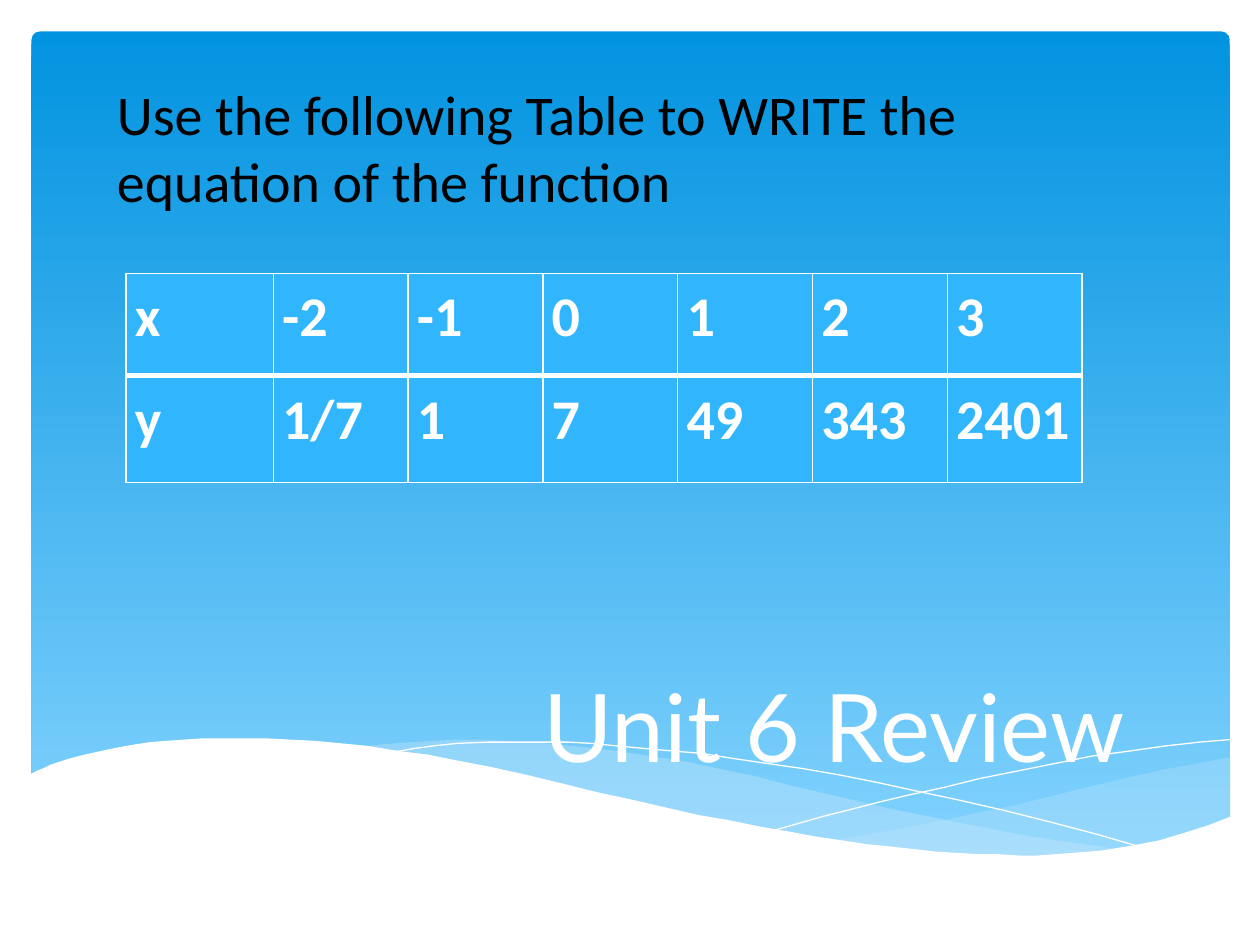
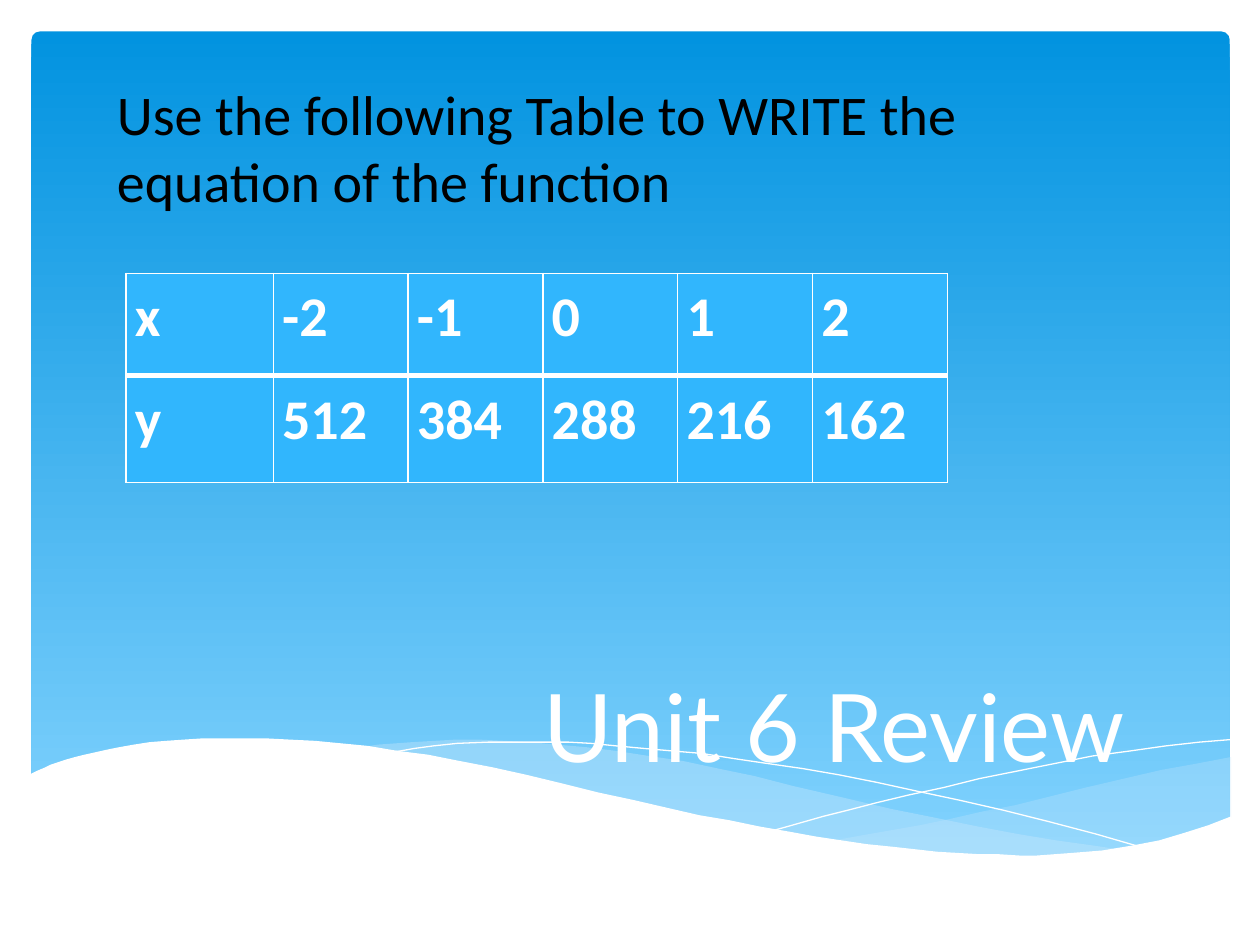
from lxml.etree import SubElement
from pptx import Presentation
from pptx.dml.color import RGBColor
from pptx.enum.shapes import MSO_SHAPE
from pptx.enum.text import MSO_AUTO_SIZE, PP_ALIGN
from pptx.oxml.ns import qn
from pptx.util import Pt

PX = 9144
COLORS = {
    "white": "FFFFFF",
    "black": "000000",
    "sky_top": "0293E0",
    "sky_bottom": "83D3FE",
    "mist": "C6E7FC",
    "cell": "31B6FD",
}
RGB = {name: RGBColor.from_string(value) for name, value in COLORS.items()}

RIGHT_MIST = [
    (976, 601), (950, 606), (922, 611), (892, 618), (862, 625), (834, 632), (806, 639),
    (780, 644), (754, 650), (730, 655), (707, 659), (684, 663), (662, 667), (692, 671),
    (719, 674), (746, 677), (770, 679), (793, 679), (815, 680), (836, 679), (855, 678),
    (873, 676), (890, 674), (907, 671), (922, 667), (937, 663), (951, 659), (964, 654),
    (977, 649), (977, 601),
]
MIDDLE_MIST = [
    (894, 675), (867, 671), (838, 667), (808, 662), (776, 656), (742, 649), (707, 642),
    (669, 633), (630, 624), (599, 616), (570, 610), (542, 604), (515, 600), (489, 596),
    (465, 593), (442, 591), (420, 589), (400, 588), (380, 587), (362, 587), (345, 588),
    (328, 589), (314, 590), (300, 591), (287, 593), (323, 598), (363, 604), (405, 613),
    (450, 624), (491, 634), (530, 642), (567, 650), (602, 657), (635, 663), (666, 668),
    (696, 672), (723, 676), (749, 678), (774, 679), (797, 680), (819, 680), (839, 680),
    (859, 679), (877, 677),
]
FALLING_LINE = [
    (310, 597), (318, 596), (329, 594), (344, 592), (363, 590), (388, 589), (417, 589),
    (451, 589), (469, 590), (489, 592), (511, 594), (533, 596), (557, 598), (582, 602),
    (609, 606), (637, 610), (666, 615), (696, 621), (728, 628), (761, 635), (796, 643),
    (832, 652), (870, 662), (908, 673),
]
RISING_LINE = [
    (614, 659), (625, 656), (653, 648), (673, 643), (696, 637), (721, 631), (749, 625),
    (777, 618), (807, 612), (837, 606), (867, 600), (897, 596), (925, 592), (952, 589),
    (976, 587),
]
WHITE_WAVE = [
    (977, 648), (959, 655), (940, 661), (920, 667), (899, 671), (875, 675), (850, 677),
    (823, 679), (809, 679), (793, 678), (778, 678), (761, 677), (744, 676), (726, 674),
    (708, 672), (688, 670), (668, 667), (648, 664), (626, 660), (603, 656), (579, 651),
    (555, 647), (529, 641), (503, 635), (475, 629), (447, 622), (418, 615), (391, 609),
    (365, 604), (340, 599), (316, 596), (292, 592), (271, 590), (250, 588), (230, 587),
    (211, 586), (193, 586), (177, 586), (161, 586), (146, 587), (132, 588), (119, 589),
    (106, 591), (95, 593), (85, 595), (76, 597), (67, 599), (59, 601), (52, 603),
    (46, 605), (40, 607), (36, 609), (29, 612), (23, 615), (23, 731), (977, 731),
]
WAVES = [
    (RIGHT_MIST, "mist", 29),
    (MIDDLE_MIST, "mist", 40),
    (FALLING_LINE, None, None),
    (RISING_LINE, None, None),
    (WHITE_WAVE, "white", 100),
]

REVIEW_TABLES = [
    [["x", "-2", "-1", "0", "1", "2", "3"],
     ["y", "1/7", "1", "7", "49", "343", "2401"]],
    [["x", "-2", "-1", "0", "1", "2"],
     ["y", "512", "384", "288", "216", "162"]],
]
ROW_HEIGHTS = [81, 85]
FIRST_COLUMN, VALUE_COLUMN = 117, 107
BORDERS = [
    {"lnL": 1, "lnR": 1, "lnT": 1, "lnB": 3},
    {"lnL": 1, "lnR": 1, "lnT": 3, "lnB": 1},
]
CAPTIONS = [
    ("Unit 6 Review", (312, 525, 700, 161), "Lato", 54, "white", PP_ALIGN.CENTER),
    ("Use the following Table to WRITE the equation of the function",
     (83, 58, 817, 118), "Calibri", 32, "black", PP_ALIGN.LEFT),
]


def style_text(paragraph, font_name, size, color, bold=False):
    font = paragraph.font
    font.name, font.size, font.bold = font_name, Pt(size), bold
    font.color.rgb = RGB[color]


def add_border(cell, side, width):
    border = SubElement(cell._tc.get_or_add_tcPr(), qn(f"a:{side}"), w=str(Pt(width)))
    fill = SubElement(border, qn("a:solidFill"))
    SubElement(fill, qn("a:srgbClr"), val=COLORS["white"])


deck = Presentation()
deck.slide_width, deck.slide_height = 1000 * PX, 750 * PX

for rows in REVIEW_TABLES:
    slide = deck.slides.add_slide(deck.slide_layouts[6])
    shapes = slide.shapes

    sky = shapes.add_shape(MSO_SHAPE.ROUNDED_RECTANGLE, 25 * PX, 25 * PX, 951 * PX, 660 * PX)
    sky.adjustments[0] = 0.01
    sky.shadow.inherit = False
    sky.line.fill.background()
    sky.fill.gradient()
    sky.fill.gradient_angle = 270
    for stop, color in zip(sky.fill.gradient_stops, ["sky_top", "sky_bottom"]):
        stop.color.rgb = RGB[color]

    for points, color, opacity in WAVES:
        outline = shapes.build_freeform(*points[0], scale=PX)
        outline.add_line_segments(points[1:], close=color is not None)
        wave = outline.convert_to_shape()
        wave.shadow.inherit = False
        if color:
            wave.line.fill.background()
            wave.fill.solid()
            wave.fill.fore_color.rgb = RGB[color]
            tint = wave._element.spPr.find(qn("a:solidFill")).find(qn("a:srgbClr"))
            SubElement(tint, qn("a:alpha"), val=str(opacity * 1000))
        else:
            wave.fill.background()
            wave.line.color.rgb = RGB["white"]
            wave.line.width = 0

    for text, box, font_name, size, color, alignment in CAPTIONS:
        caption = shapes.add_textbox(*(length * PX for length in box)).text_frame
        caption.word_wrap = True
        caption.auto_size = MSO_AUTO_SIZE.NONE
        paragraph = caption.paragraphs[0]
        paragraph.text = text
        paragraph.alignment = alignment
        style_text(paragraph, font_name, size, color)

    widths = [FIRST_COLUMN] + [VALUE_COLUMN] * (len(rows[0]) - 1)
    values = shapes.add_table(len(rows), len(widths), 100 * PX, 217 * PX,
                              sum(widths) * PX, sum(ROW_HEIGHTS) * PX).table
    values.horz_banding = False
    for column, width in zip(values.columns, widths):
        column.width = width * PX
    for r, row in enumerate(rows):
        values.rows[r].height = ROW_HEIGHTS[r] * PX
        for c, text in enumerate(row):
            cell = values.cell(r, c)
            cell.margin_left = cell.margin_right = 7 * PX
            cell.margin_top = cell.margin_bottom = 0
            for side, width in BORDERS[r].items():
                add_border(cell, side, width)
            cell.fill.solid()
            cell.fill.fore_color.rgb = RGB["cell"]
            paragraph = cell.text_frame.paragraphs[0]
            paragraph.text = text
            paragraph.line_spacing = 1.15
            style_text(paragraph, "Calibri", 32, "white", bold=True)

deck.save("out.pptx")
